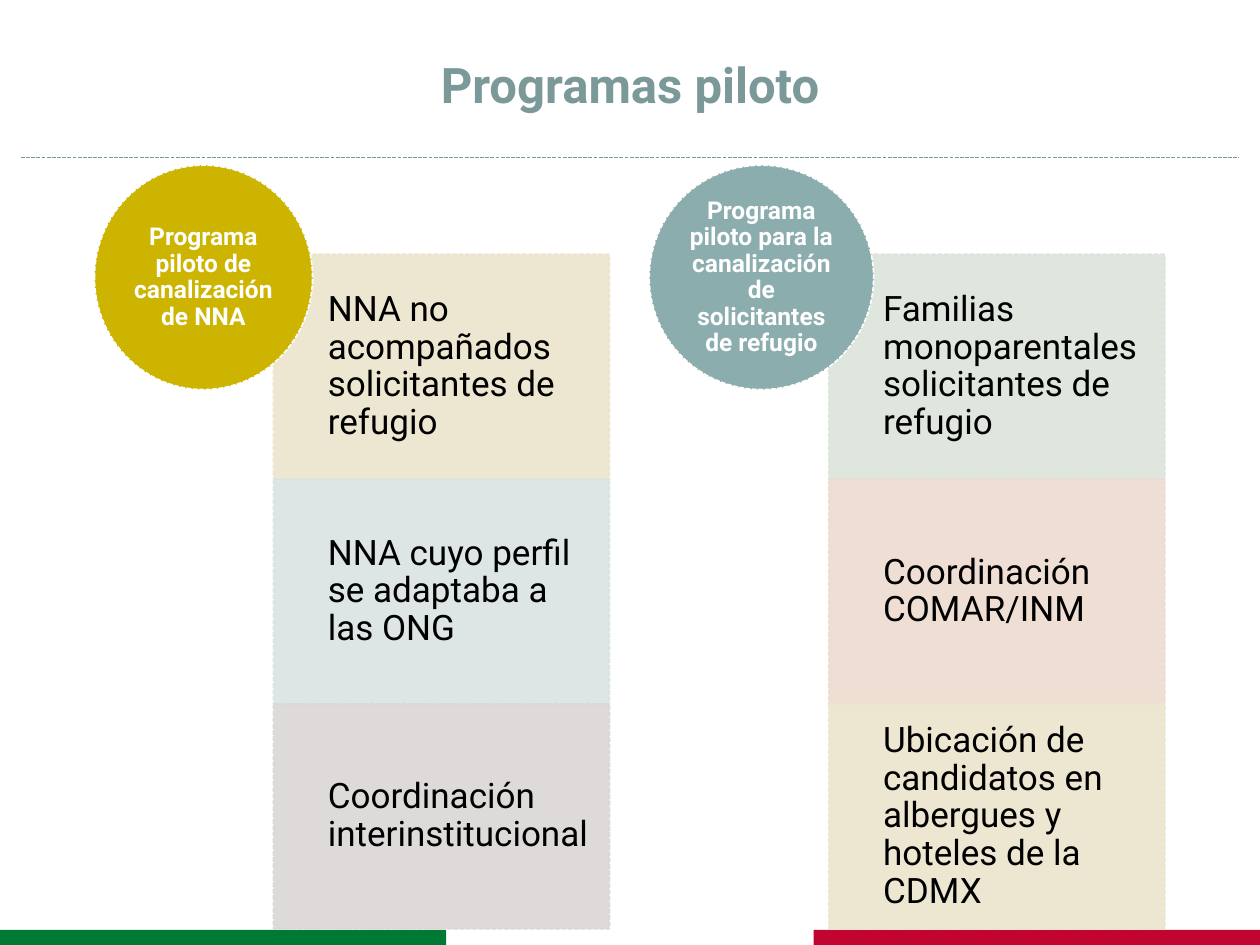
"""Build the slide "Programas piloto" with two columns of programme traits."""
from lxml import etree
from pptx import Presentation
from pptx.dml.color import RGBColor
from pptx.enum.dml import MSO_LINE
from pptx.enum.shapes import MSO_CONNECTOR, MSO_SHAPE
from pptx.enum.text import MSO_ANCHOR, PP_ALIGN
from pptx.oxml.ns import qn
from pptx.util import Pt

RECTANGLE, OVAL = MSO_SHAPE.RECTANGLE, MSO_SHAPE.OVAL
STRAIGHT = MSO_CONNECTOR.STRAIGHT
DASH = MSO_LINE.SQUARE_DOT
MIDDLE = MSO_ANCHOR.MIDDLE
LEFT, CENTER = PP_ALIGN.LEFT, PP_ALIGN.CENTER

BLACK = RGBColor(0x00, 0x00, 0x00)
WHITE = RGBColor(0xFF, 0xFF, 0xFF)
SLATE = RGBColor(0x7C, 0x99, 0x9A)
GREEN = RGBColor(0x00, 0x79, 0x35)
RED = RGBColor(0xC2, 0x04, 0x30)
GOLD = RGBColor(0xCC, 0xB4, 0x00)
TEAL = RGBColor(0x8C, 0xAD, 0xAE)
SAND = RGBColor(0xEC, 0xE5, 0xCC)
MIST = RGBColor(0xDA, 0xE3, 0xE3)
STONE = RGBColor(0xDA, 0xD7, 0xD5)
SAGE = RGBColor(0xDB, 0xE4, 0xDA)
PEACH = RGBColor(0xEE, 0xDB, 0xD0)

FONT = "Roboto"
SLIDE_WIDTH, SLIDE_HEIGHT = 720, 540
BAR_WIDTH, BAR_HEIGHT = 255, 8.6
COLUMN_TOP, COLUMN_WIDTH, CELL_HEIGHT = 145.3, 192, 128.5
CIRCLE_TOP, CIRCLE_HEIGHT = 94.4, 128.2

PROGRAMMES = [
    {
        "left": 156.3,
        "circle": (54, 124.6, GOLD, "Programa piloto de canalización de NNA"),
        "cells": [
            (SAND, "NNA no acompañados solicitantes de refugio"),
            (MIST, "NNA cuyo perfil se adaptaba a las ONG"),
            (STONE, "Coordinación interinstitucional"),
        ],
    },
    {
        "left": 473.6,
        "circle": (371, 128.2, TEAL,
                   "Programa piloto para la canalización de solicitantes de refugio"),
        "cells": [
            (SAGE, "Familias monoparentales solicitantes de refugio"),
            (PEACH, "Coordinación COMAR/INM"),
            (SAND, "Ubicación de candidatos en albergues y hoteles de la CDMX"),
        ],
    },
]


def write_text(shape, text, size, color, bold=False, align=LEFT,
               insets=(0, 0, 0, 0), spacing=0.9):
    """Put one formatted paragraph into a shape, centred vertically."""
    frame = shape.text_frame
    frame.word_wrap = True
    frame.vertical_anchor = MIDDLE
    (frame.margin_left, frame.margin_top,
     frame.margin_right, frame.margin_bottom) = map(Pt, insets)
    para = frame.paragraphs[0]
    para.alignment = align
    para.line_spacing = spacing
    span = para.add_run()
    span.text = text
    span.font.name = FONT
    span.font.size = Pt(size)
    span.font.bold = bold
    span.font.color.rgb = color


def set_opacity(shape, percent):
    """Make the solid fill and line of a shape partly transparent."""
    for color in shape._element.spPr.iter(qn("a:srgbClr")):
        etree.SubElement(color, qn("a:alpha"), val=str(percent * 1000))


def add_box(page, kind, left, top, width, height, fill, outline=None):
    """Add a filled shape, with a dashed outline if a colour is given."""
    box = page.shapes.add_shape(kind, Pt(left), Pt(top), Pt(width), Pt(height))
    box.shadow.inherit = False
    box.fill.solid()
    box.fill.fore_color.rgb = fill
    if outline is None:
        box.line.fill.background()
    else:
        box.line.color.rgb = outline
        box.line.width = Pt(0.9)
        box.line.dash_style = DASH
    return box


def add_rule(page, left, right, top):
    """Add the dashed rule under the title."""
    rule = page.shapes.add_connector(STRAIGHT, Pt(left), Pt(top), Pt(right), Pt(top))
    rule.line.color.rgb = SLATE
    rule.line.width = Pt(0.75)
    rule.line.dash_style = DASH
    etree.SubElement(rule._element.spPr, qn("a:effectLst"))


def add_title(page, text):
    """Place and fill the title placeholder."""
    title = page.shapes.title
    title.left, title.top, title.width, title.height = map(Pt, (24, 18, 672, 60))
    write_text(title, text, size=28, color=SLATE, bold=True, align=CENTER,
               insets=(7.2, 3.6, 7.2, 3.6), spacing=1.0)


def add_programme(page, left, circle, cells):
    """Add a column of cells with its heading circle on the corner."""
    for row, (fill, text) in enumerate(cells):
        cell = add_box(page, RECTANGLE, left, COLUMN_TOP + row * CELL_HEIGHT,
                       COLUMN_WIDTH, CELL_HEIGHT, fill, outline=fill)
        set_opacity(cell, 90)
        write_text(cell, text, size=20, color=BLACK, insets=(31, 11.5, 11, 11.5))
    circle_left, circle_width, fill, text = circle
    heading = add_box(page, OVAL, circle_left, CIRCLE_TOP, circle_width,
                      CIRCLE_HEIGHT, fill, outline=WHITE)
    write_text(heading, text, size=14, color=WHITE, bold=True, align=CENTER)


def main():
    """Build and save the deck."""
    deck = Presentation()
    deck.slide_width, deck.slide_height = Pt(SLIDE_WIDTH), Pt(SLIDE_HEIGHT)
    page = deck.slides.add_slide(deck.slide_layouts[5])
    for left, fill in ((0, GREEN), (SLIDE_WIDTH - BAR_WIDTH, RED)):
        add_box(page, RECTANGLE, left, SLIDE_HEIGHT - BAR_HEIGHT,
                BAR_WIDTH, BAR_HEIGHT, fill)
    add_rule(page, 12, 708, 90)
    add_title(page, "Programas piloto")
    for programme in PROGRAMMES:
        add_programme(page, **programme)
    deck.save("out.pptx")


if __name__ == "__main__":
    main()
